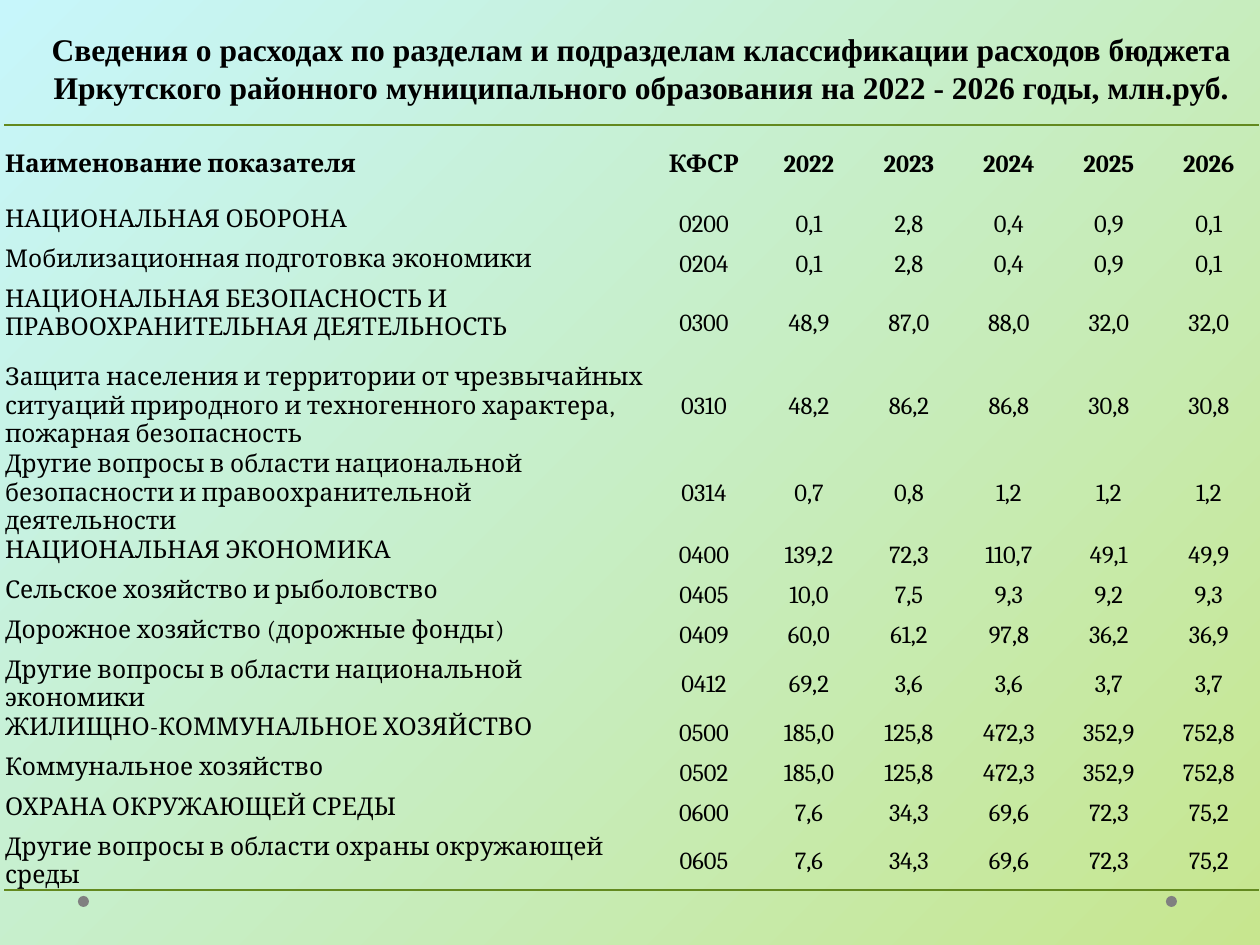
"""Builds the slide on budget spending by section, 2022 to 2026."""
from dataclasses import dataclass

from lxml import etree
from pptx import Presentation
from pptx.dml.color import RGBColor
from pptx.enum.shapes import MSO_SHAPE
from pptx.enum.text import MSO_ANCHOR, MSO_AUTO_SIZE, PP_ALIGN
from pptx.oxml.ns import qn
from pptx.util import Pt

OVAL = MSO_SHAPE.OVAL
LEFT, CENTER = PP_ALIGN.LEFT, PP_ALIGN.CENTER
TOP, MIDDLE, BOTTOM = MSO_ANCHOR.TOP, MSO_ANCHOR.MIDDLE, MSO_ANCHOR.BOTTOM
NO_FIT = MSO_AUTO_SIZE.NONE
EMU_PER_PX = 914400 / 126
PLAIN_TABLE = "{2D5ABB26-0587-4C30-8999-92F81FD0307C}"

TITLE = ("Сведения о расходах по разделам и подразделам классификации расходов бюджета "
         "Иркутского районного муниципального образования на 2022 - 2026 годы, млн.руб.")
COLUMNS = [645, 110] + [100] * 5
ROW, TALL, TALLEST = 40, 79, 87
SPENDING = [
    (TALL, "Наименование показателя", "КФСР", "2022", "2023", "2024", "2025", "2026"),
    (ROW, "НАЦИОНАЛЬНАЯ ОБОРОНА", "0200", "0,1", "2,8", "0,4", "0,9", "0,1"),
    (ROW, "Мобилизационная подготовка экономики", "0204", "0,1", "2,8", "0,4", "0,9", "0,1"),
    (TALL, "НАЦИОНАЛЬНАЯ БЕЗОПАСНОСТЬ И ПРАВООХРАНИТЕЛЬНАЯ ДЕЯТЕЛЬНОСТЬ",
     "0300", "48,9", "87,0", "88,0", "32,0", "32,0"),
    (TALLEST, "Защита населения и территории от чрезвычайных ситуаций природного "
     "и техногенного характера, пожарная безопасность",
     "0310", "48,2", "86,2", "86,8", "30,8", "30,8"),
    (TALL, "Другие вопросы в области национальной безопасности и правоохранительной деятельности",
     "0314", "0,7", "0,8", "1,2", "1,2", "1,2"),
    (ROW, "НАЦИОНАЛЬНАЯ ЭКОНОМИКА", "0400", "139,2", "72,3", "110,7", "49,1", "49,9"),
    (ROW, "Сельское хозяйство и рыболовство", "0405", "10,0", "7,5", "9,3", "9,2", "9,3"),
    (ROW, "Дорожное хозяйство (дорожные фонды)", "0409", "60,0", "61,2", "97,8", "36,2", "36,9"),
    (ROW, "Другие вопросы в области национальной экономики",
     "0412", "69,2", "3,6", "3,6", "3,7", "3,7"),
    (ROW, "ЖИЛИЩНО-КОММУНАЛЬНОЕ ХОЗЯЙСТВО", "0500", "185,0", "125,8", "472,3", "352,9", "752,8"),
    (ROW, "Коммунальное хозяйство", "0502", "185,0", "125,8", "472,3", "352,9", "752,8"),
    (ROW, "ОХРАНА ОКРУЖАЮЩЕЙ СРЕДЫ", "0600", "7,6", "34,3", "69,6", "72,3", "75,2"),
    (ROW, "Другие вопросы в области охраны окружающей среды",
     "0605", "7,6", "34,3", "69,6", "72,3", "75,2"),
]


@dataclass(frozen=True)
class Theme:
    text: str = "000000"
    rule: str = "63891F"
    dot: str = "808080"
    sky: str = "C7F6FB"
    lime: str = "C7E68F"
    title_font: str = "Times New Roman"
    table_font: str = "Cambria"
    title_size: int = 18
    table_size: int = 14
    rule_width: int = 1


def px(n):
    return round(n * EMU_PER_PX)


class Deck:
    def __init__(self, theme, width, height):
        self.theme = theme
        self.prs = Presentation()
        self.prs.slide_width, self.prs.slide_height = px(width), px(height)
        self.s = self.prs.slides.add_slide(self.prs.slide_layouts[5])

    def background(self):
        fill = self.s.background.fill
        fill.gradient()
        fill.gradient_angle = 315
        for stop, color in zip(fill.gradient_stops, (self.theme.sky, self.theme.lime)):
            stop.color.rgb = RGBColor.from_string(color)

    def style(self, p, font, size, bold, align):
        p.alignment = align
        for r in p.runs:
            r.font.name, r.font.size, r.font.bold = font, Pt(size), bold
            r.font.color.rgb = RGBColor.from_string(self.theme.text)

    def title(self, text, x, y, w, h):
        sp = self.s.shapes.title
        sp.left, sp.top, sp.width, sp.height = px(x), px(y), px(w), px(h)
        tf = sp.text_frame
        tf.text = text
        tf.word_wrap, tf.auto_size, tf.vertical_anchor = True, NO_FIT, BOTTOM
        self.style(tf.paragraphs[0], self.theme.title_font, self.theme.title_size, True, CENTER)

    def dot(self, x, y, size):
        sp = self.s.shapes.add_shape(OVAL, px(x), px(y), px(size), px(size))
        sp.shadow.inherit = False
        sp.fill.solid()
        sp.fill.fore_color.rgb = RGBColor.from_string(self.theme.dot)
        sp.line.fill.background()

    def border(self, cell, side):
        ln = etree.Element(qn(f"a:{side}"), w=str(Pt(self.theme.rule_width)))
        fill = etree.SubElement(ln, qn("a:solidFill"))
        etree.SubElement(fill, qn("a:srgbClr"), val=self.theme.rule)
        cell._tc.get_or_add_tcPr().insert(0, ln)

    def cell(self, cell, text, bold, align, anchor):
        cell.text = text
        cell.fill.background()
        cell.vertical_anchor = anchor
        cell.margin_left = cell.margin_right = cell.margin_top = px(1)
        cell.margin_bottom = 0
        p = cell.text_frame.paragraphs[0]
        self.style(p, self.theme.table_font, self.theme.table_size, bold, align)

    def table(self, rows, columns, x, y):
        w, h = sum(columns), sum(row[0] for row in rows)
        frame = self.s.shapes.add_table(len(rows), len(columns), px(x), px(y), px(w), px(h))
        table = frame.table
        table.first_row = table.horz_banding = False
        table._tbl.tblPr.find(qn("a:tableStyleId")).text = PLAIN_TABLE
        for column, width in zip(table.columns, columns):
            column.width = px(width)
        last = len(rows) - 1
        for i, (height, *texts) in enumerate(rows):
            table.rows[i].height = px(height)
            for j, text in enumerate(texts):
                cell = table.cell(i, j)
                align = CENTER if j else LEFT
                anchor = MIDDLE if j or i == 0 else TOP
                self.cell(cell, text, i == 0, align, anchor)
                if i in (0, last):
                    self.border(cell, "lnB" if i else "lnT")


def main():
    deck = Deck(Theme(), 1260, 945)
    deck.background()
    for x in (78, 1166):
        deck.dot(x, 896, 11)
    deck.title(TITLE, 19, 16, 1245, 96)
    deck.table(SPENDING, COLUMNS, 4, 125)
    deck.prs.save("out.pptx")


if __name__ == "__main__":
    main()
